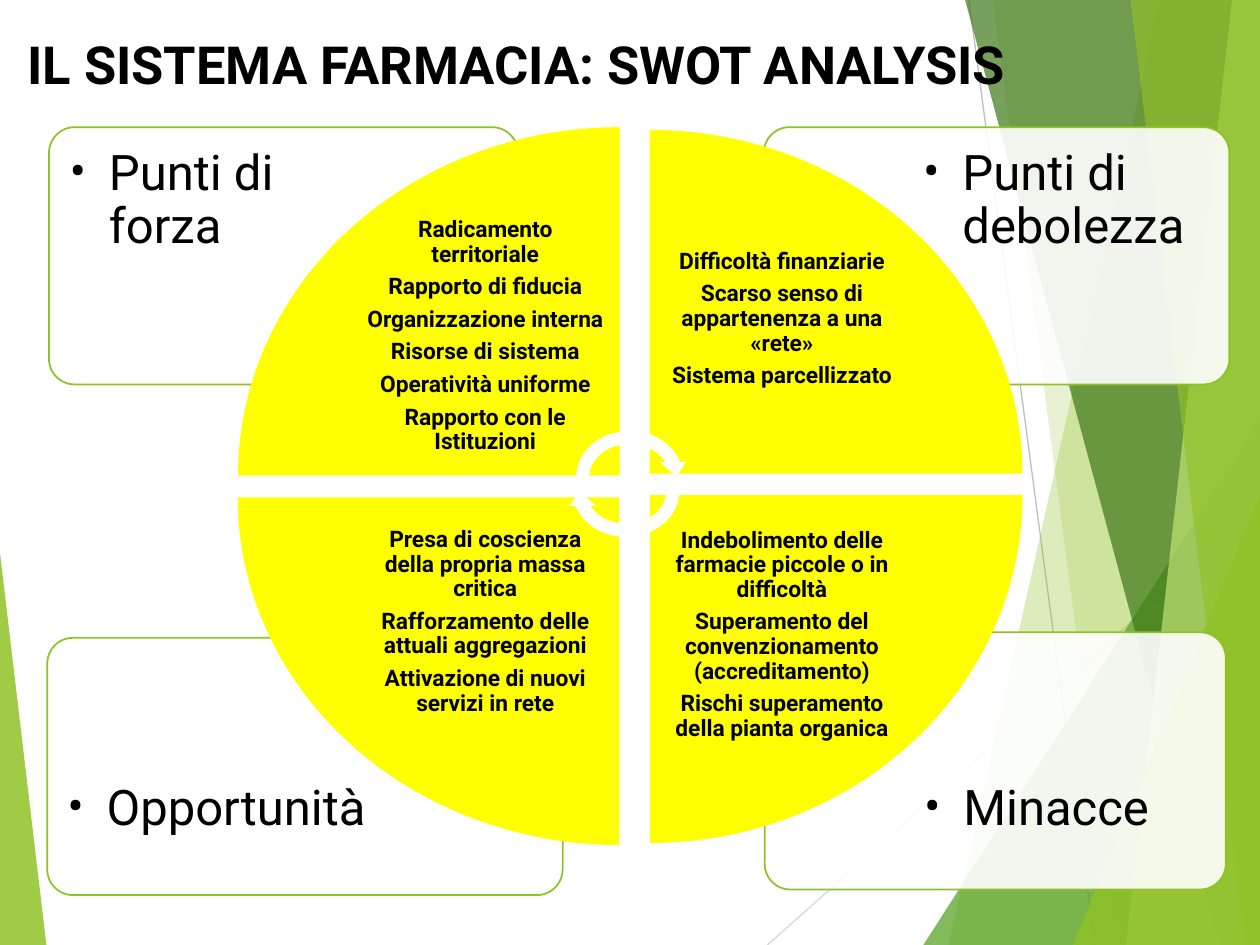
"""Builds the pharmacy SWOT slide: four wedges over four labelled panels."""
from lxml import etree
from pptx import Presentation
from pptx.dml.color import RGBColor
from pptx.enum.shapes import MSO_CONNECTOR, MSO_SHAPE
from pptx.enum.text import PP_ALIGN
from pptx.oxml.ns import qn
from pptx.util import Pt

STRAIGHT = MSO_CONNECTOR.STRAIGHT
TRIANGLE = MSO_SHAPE.ISOSCELES_TRIANGLE
PANEL = MSO_SHAPE.ROUNDED_RECTANGLE
WEDGE = MSO_SHAPE.PIE_WEDGE
ARROW = MSO_SHAPE.CIRCULAR_ARROW
LEFT, CENTER = PP_ALIGN.LEFT, PP_ALIGN.CENTER

WIDTH, HEIGHT = 720, 540
FONT = "Roboto"
BLACK = RGBColor(0, 0, 0)
WHITE = RGBColor(255, 255, 255)
YELLOW = RGBColor(255, 255, 0)
LIME = RGBColor(0x90, 0xC2, 0x26)
GREEN = RGBColor(0x54, 0xA0, 0x21)
FOREST = RGBColor(0x3F, 0x78, 0x19)
PALE_LIME = RGBColor(0xC0, 0xE4, 0x74)
GRAY = RGBColor(0xBF, 0xBF, 0xBF)
LIGHT_GRAY = RGBColor(0xD9, 0xD9, 0xD9)

PANELS = [
    ((437, 361.3, 263.5, 147), (519.5, 439, 178.5), "Minacce"),
    ((27, 364.5, 294.5, 147), (30, 439, 199.5), "Opportunità"),
    ((436.5, 72.7, 266, 147), (519, 76, 180), "Punti di debolezza"),
    ((28, 72.7, 268, 147), (31.3, 76, 180.5), "Punti di forza"),
]
WEDGES = [
    ((136, 72.7, 218, 199), 0, (200, 124.5, 154.5), [
        "Radicamento territoriale", "Rapporto di fiducia",
        "Organizzazione interna", "Risorse di sistema",
        "Operatività uniforme", "Rapporto con le Istituzioni"]),
    ((379.5, 66, 196.5, 213), 90, (371.5, 142.7, 150.5), [
        "Difficoltà finanziarie",
        "Scarso senso di appartenenza a una «rete»",
        "Sistema parcellizzato"]),
    ((371.3, 283, 213, 198.7), 180, (371.5, 302, 150.5), [
        "Indebolimento delle farmacie piccole o in difficoltà",
        "Superamento del convenzionamento (accreditamento)",
        "Rischi superamento della pianta organica"]),
    ((145.5, 274.5, 198.7, 218), 270, (200, 301.6, 154.5), [
        "Presa di coscienza della propria massa critica",
        "Rafforzamento delle attuali aggregazioni",
        "Attivazione di nuovi servizi in rete"]),
]
ARROWS = [((325.5, 242.5, 68.5, 60), 0), ((323.5, 250.5, 68.5, 60), 180)]


def paint(shape, color, opacity=100, outline=None):
    """Give a shape a flat fill, an optional outline and no shadow."""
    shape.shadow.inherit = False
    shape.fill.solid()
    shape.fill.fore_color.rgb = color
    if opacity < 100:
        swatch = shape.fill._xPr.find(qn("a:solidFill"))[0]
        etree.SubElement(swatch, qn("a:alpha")).set("val", str(opacity * 1000))
    if outline is None:
        shape.line.fill.background()
    else:
        shape.line.color.rgb = outline
        shape.line.width = Pt(1)


def add_preset(page, kind, frame, color, opacity=100, outline=None, turn=0, adjust=None):
    """Add a preset shape in a frame of left, top, width and height."""
    shape = page.shapes.add_shape(kind, *map(Pt, frame))
    shape.rotation = turn
    if adjust is not None:
        shape.adjustments[0] = adjust
    paint(shape, color, opacity, outline)


def add_ray(page, start, end, color):
    """Add a thin line between two points."""
    ray = page.shapes.add_connector(STRAIGHT, *map(Pt, start + end))
    ray.line.color.rgb = color
    ray.line.width = Pt(0.75)
    etree.SubElement(ray._element.spPr, qn("a:effectLst"))


def add_band(page, top_left, bottom_left, color, opacity):
    """Add a full-height band that runs to the right edge of the slide."""
    builder = page.shapes.build_freeform(Pt(top_left), Pt(0))
    corners = [(WIDTH, 0), (WIDTH, HEIGHT), (bottom_left, HEIGHT)]
    builder.add_line_segments([(Pt(x), Pt(y)) for x, y in corners])
    paint(builder.convert_to_shape(), color, opacity)


def add_corner(page, left, top, color, opacity):
    """Add a right triangle that fills the bottom right corner."""
    frame = (left, top, WIDTH - left, HEIGHT - top)
    add_preset(page, TRIANGLE, frame, color, opacity, adjust=1)


def add_text(page, frame, lines, size, bold=False, align=LEFT,
             inset=(7.2, 0), spacing=1, after=0):
    """Add a wrapped text box and return its paragraphs."""
    box = page.shapes.add_textbox(*map(Pt, frame))
    text = box.text_frame
    text.word_wrap = True
    text.margin_left = text.margin_right = Pt(inset[0])
    text.margin_top = text.margin_bottom = Pt(inset[1])
    text.text = "\n".join(lines)
    for para in text.paragraphs:
        para.alignment = align
        para.line_spacing = spacing
        para.space_after = Pt(after)
        for span in para.runs:
            span.font.name = FONT
            span.font.size = Pt(size)
            span.font.bold = bold
            span.font.color.rgb = BLACK
    return text.paragraphs


def add_bullet(para):
    """Turn a paragraph into a bullet with a hanging indent."""
    properties = para._p.get_or_add_pPr()
    properties.set("marL", str(Pt(22.5)))
    properties.set("indent", str(-Pt(22.5)))
    etree.SubElement(properties, qn("a:buFont")).set("typeface", FONT)
    etree.SubElement(properties, qn("a:buChar")).set("char", "•")


def add_backdrop(page):
    """Draw the green facets and thin rays behind the content."""
    add_ray(page, (553.7, 0), (625.7, HEIGHT), GRAY)
    add_ray(page, (WIDTH, 290), (438.5, HEIGHT), LIGHT_GRAY)
    add_band(page, 663, 542, LIME, 30)
    add_band(page, 567.5, 638.5, LIME, 20)
    add_corner(page, 527.6, 240, GREEN, 72)
    add_band(page, 551.5, 697, FOREST, 70)
    add_band(page, 704, 643.5, PALE_LIME, 70)
    add_band(page, 646, 711.5, LIME, 65)
    add_corner(page, 613, 283, LIME, 80)
    add_preset(page, TRIANGLE, (0, 316, 26.5, 224), LIME, 85, adjust=0)


def main():
    """Build the slide and save it."""
    deck = Presentation()
    deck.slide_width, deck.slide_height = Pt(WIDTH), Pt(HEIGHT)
    page = deck.slides.add_slide(deck.slide_layouts[6])
    add_backdrop(page)
    add_text(page, (8.6, 18.3, 651, 40), ["IL SISTEMA FARMACIA: SWOT ANALYSIS"], 30, bold=True)
    for frame, (left, top, width), label in PANELS:
        add_preset(page, PANEL, frame, WHITE, 90, LIME, adjust=0.1)
        paras = add_text(page, (left, top, width, 70), [label], 28,
                         inset=(8.5, 8.5), spacing=0.9)
        add_bullet(paras[0])
    for frame, turn, (left, top, width), lines in WEDGES:
        add_preset(page, WEDGE, frame, YELLOW, turn=turn)
        add_text(page, (left, top, width, 130), lines, 13, bold=True,
                 align=CENTER, spacing=0.9, after=4.55)
    for frame, turn in ARROWS:
        add_preset(page, ARROW, frame, WHITE, turn=turn)
    deck.save("out.pptx")


if __name__ == "__main__":
    main()
